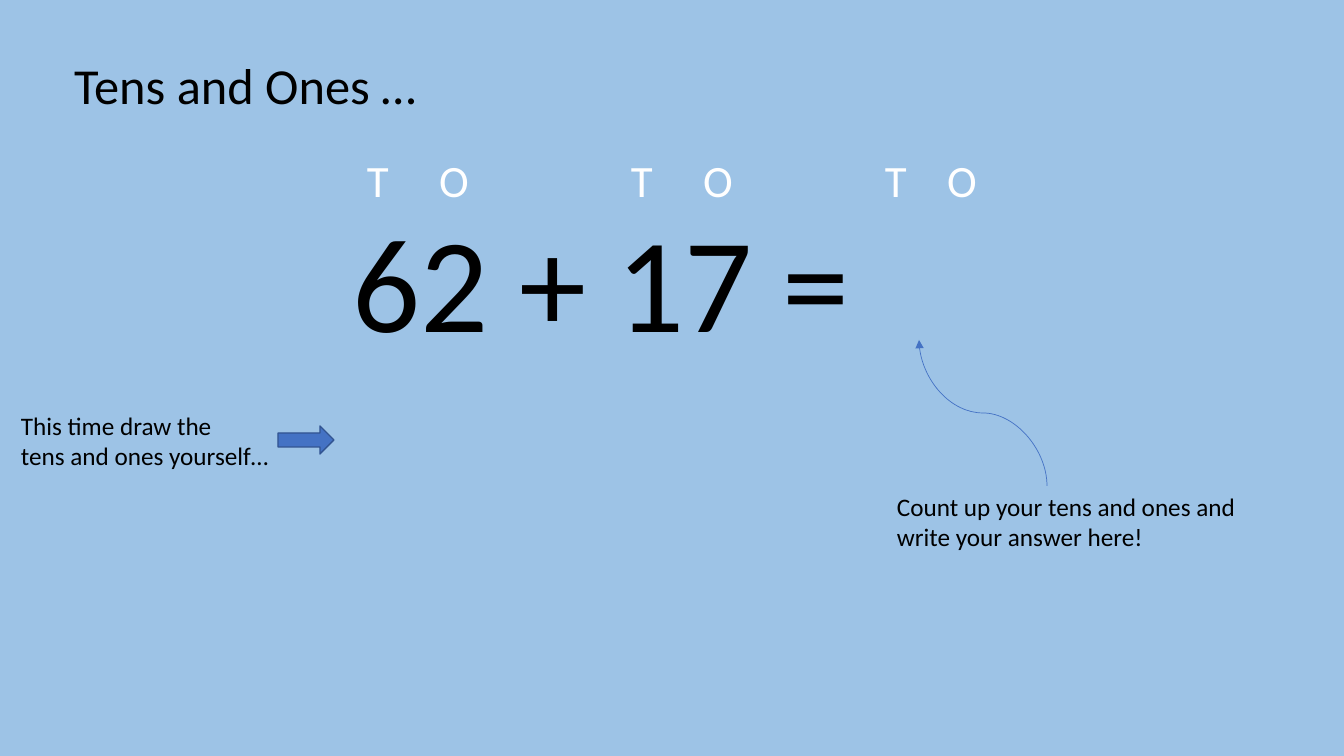
from dataclasses import dataclass
from typing import Any

from lxml.etree import SubElement
from pptx import Presentation
from pptx.dml.color import RGBColor
from pptx.enum.shapes import MSO_CONNECTOR as Link, MSO_SHAPE as Shape
from pptx.enum.text import MSO_ANCHOR as Anchor, MSO_AUTO_SIZE as Fit, PP_ALIGN as Align
from pptx.oxml.ns import qn
from pptx.util import Emu, Pt

EMU_PER_PX = 914400 / 100.8


def px(length):
    return Emu(round(length * EMU_PER_PX))


def colour(value):
    return RGBColor.from_string(value)


@dataclass
class Board:
    slide: Any
    font: str = "Calibri"
    ink: str = "000000"
    accent: str = "4472C4"
    edge: str = "325491"

    def background(self, value):
        fill = self.slide.background.fill
        fill.solid()
        fill.fore_color.rgb = colour(value)

    def fill_text(self, holder, lines, size, ink=None):
        frame = holder.text_frame
        frame.word_wrap = True
        frame.auto_size = Fit.SHAPE_TO_FIT_TEXT
        frame.vertical_anchor = Anchor.TOP
        for number, line in enumerate(lines):
            paragraph = frame.add_paragraph() if number else frame.paragraphs[0]
            paragraph.alignment = Align.LEFT
            run = paragraph.add_run()
            run.text = line
            run.font.name = self.font
            run.font.size = Pt(size)
            run.font.color.rgb = colour(ink or self.ink)
        return frame

    def title(self, box, line, size):
        heading = self.slide.shapes.title
        heading.left, heading.top, heading.width, heading.height = map(px, box)
        self.fill_text(heading, [line], size)

    def text(self, box, lines, size, ink=None):
        holder = self.slide.shapes.add_textbox(*map(px, box))
        return self.fill_text(holder, lines, size, ink)

    def columns(self, box, letters, centres, size, ink):
        frame = self.text(box, ["\t".join(letters)], size, ink)
        properties = frame.paragraphs[0]._p.get_or_add_pPr()
        stops = SubElement(properties, qn("a:tabLst"))
        for centre in centres:
            SubElement(stops, qn("a:tab"), pos=str(px(centre)), algn="ctr")

    def block_arrow(self, box):
        arrow = self.slide.shapes.add_shape(Shape.RIGHT_ARROW, *map(px, box))
        arrow.shadow.inherit = False
        arrow.fill.solid()
        arrow.fill.fore_color.rgb = colour(self.accent)
        arrow.line.color.rgb = colour(self.edge)
        arrow.line.width = Pt(1)

    def rising_curve(self, start, end):
        (x1, y1), (x2, y2) = start, end
        mid_x, mid_y = (x1 + x2) / 2, (y1 + y2) / 2
        half_run, half_rise = abs(y2 - y1) / 2, abs(x2 - x1) / 2
        corners = (mid_x - half_run, mid_y + half_rise, mid_x + half_run, mid_y - half_rise)
        curve = self.slide.shapes.add_connector(Link.CURVE, *map(px, corners))
        curve.line.color.rgb = colour(self.accent)
        curve.line.width = Pt(0.5)
        properties = curve._element.spPr
        properties.find(qn("a:xfrm")).set("rot", str(270 * 60000))
        SubElement(properties.find(qn("a:ln")), qn("a:tailEnd"), type="triangle")
        SubElement(properties, qn("a:effectLst"))


def main():
    deck = Presentation()
    deck.slide_width, deck.slide_height = px(1344), px(756)
    board = Board(deck.slides.add_slide(deck.slide_layouts[5]))
    board.background("9DC3E6")
    board.title((64, 49, 430, 72), "Tens and Ones …", 36)
    board.columns((357, 148, 724, 65), "TO" * 3, (87, 275, 351, 529, 595), 32, "FFFFFF")
    board.text((343, 193, 549, 173), ["62 + 17 ="], 96)
    board.text((887, 486, 408, 72),
               ["Count up your tens and ones and", "write your answer here!"], 18)
    board.rising_curve((1047, 486), (919, 340))
    board.text((11, 405, 331, 72), ["This time draw the", "tens and ones yourself…"], 18)
    board.block_arrow((278, 426, 56, 28))
    deck.save("out.pptx")


if __name__ == "__main__":
    main()
